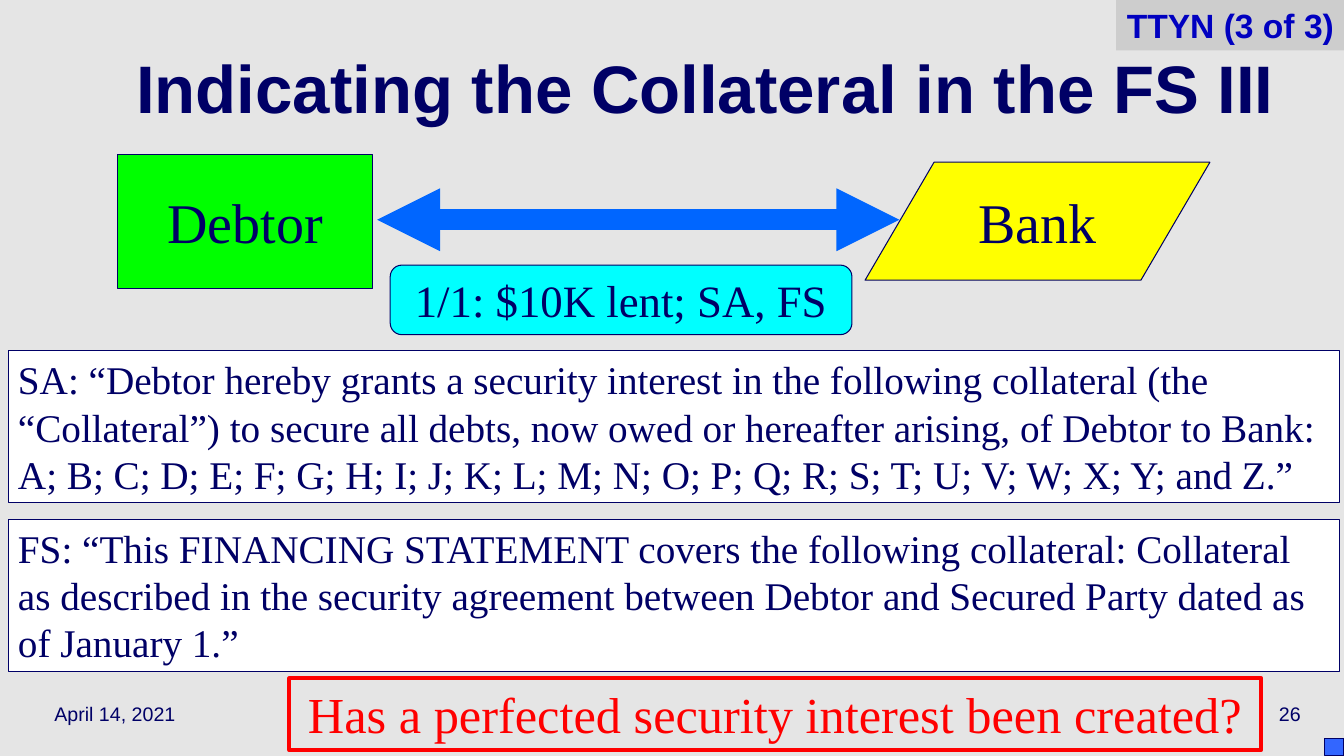
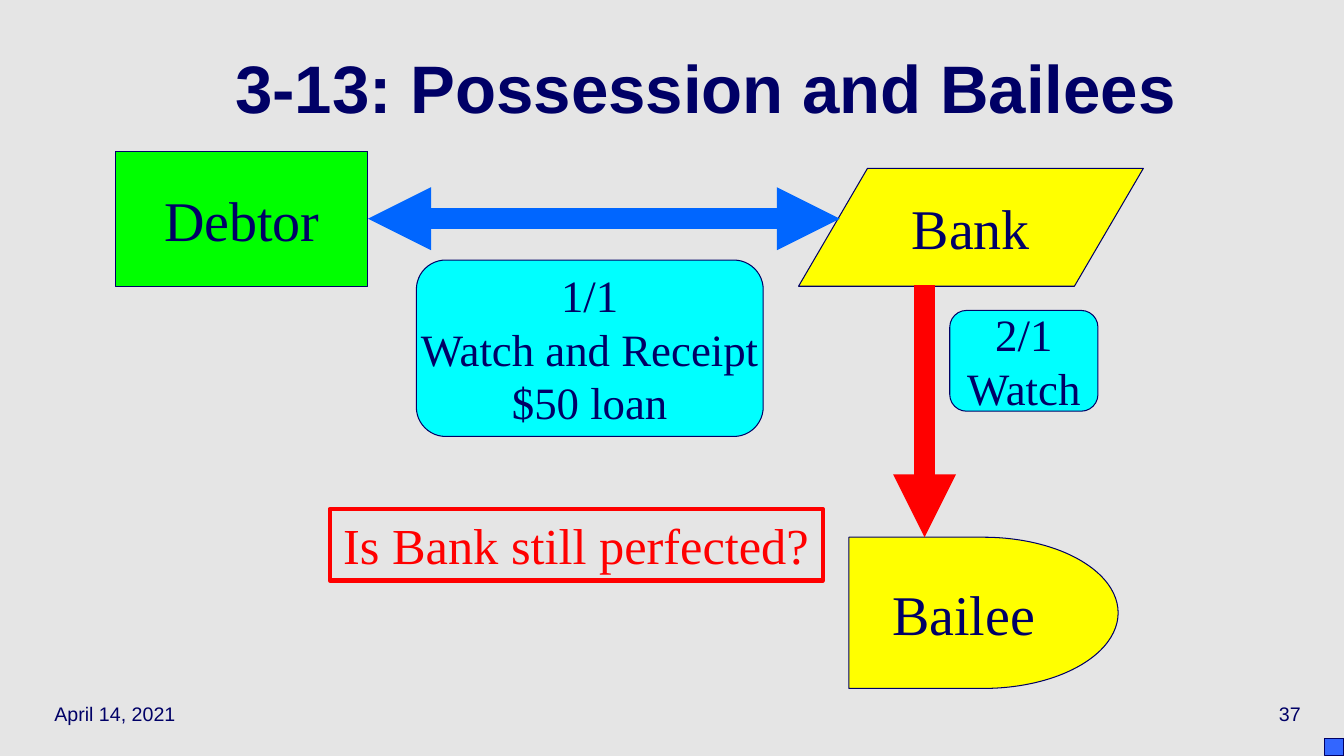
from dataclasses import dataclass
from typing import Optional

from lxml.etree import SubElement
from pptx import Presentation
from pptx.dml.color import RGBColor
from pptx.enum.shapes import MSO_CONNECTOR, MSO_SHAPE
from pptx.enum.text import MSO_ANCHOR, PP_ALIGN
from pptx.oxml.ns import qn
from pptx.shapes.autoshape import Shape
from pptx.shapes.connector import Connector
from pptx.slide import Slide
from pptx.text.text import TextFrame
from pptx.util import Inches, Pt


@dataclass(frozen=True)
class Theme:
    sans: str = "Arial"
    serif: str = "Times New Roman"
    background: str = "E5E5E5"
    tag_fill: str = "CDCDCD"
    ink: str = "000066"
    tag_ink: str = "0000C0"
    green: str = "00FF00"
    yellow: str = "FFFF00"
    cyan: str = "00FFFF"
    white: str = "FFFFFF"
    red: str = "FF0000"
    arrow_blue: str = "0066FF"
    corner_blue: str = "3366FF"
    title_size: int = 48
    party_size: int = 40
    question_size: int = 36
    event_size: int = 32
    quote_size: int = 28
    tag_size: int = 24
    footer_size: int = 14
    thin_line: float = 0.75
    question_line: float = 3
    arrow_line: float = 15


THEME = Theme()


@dataclass(frozen=True)
class TextStyle:
    size: int
    font: str = THEME.serif
    color: str = THEME.ink
    bold: bool = False
    align: PP_ALIGN = PP_ALIGN.CENTER
    anchor: MSO_ANCHOR = MSO_ANCHOR.MIDDLE
    wrap: bool = False


@dataclass(frozen=True)
class BoxStyle:
    text: TextStyle
    fill: Optional[str]
    line: Optional[str] = THEME.ink
    line_width: float = THEME.thin_line


@dataclass(frozen=True)
class Box:
    style: BoxStyle
    left: float
    top: float
    width: float
    height: float
    text: str = ""
    kind: MSO_SHAPE = MSO_SHAPE.RECTANGLE


@dataclass(frozen=True)
class Arrow:
    start: tuple[float, float]
    end: tuple[float, float]
    color: str
    both_ends: bool = False


# Text and box styles
TITLE = TextStyle(THEME.title_size, THEME.sans, bold=True, wrap=True)
DATE = TextStyle(THEME.footer_size, THEME.sans, align=PP_ALIGN.LEFT)
NUMBER = TextStyle(THEME.footer_size, THEME.sans, align=PP_ALIGN.RIGHT)
PARTY_TEXT = TextStyle(THEME.party_size)
DEBTOR = BoxStyle(PARTY_TEXT, THEME.green)
HOLDER = BoxStyle(PARTY_TEXT, THEME.yellow)
EVENT = BoxStyle(TextStyle(THEME.event_size), THEME.cyan)
QUOTE = BoxStyle(
    TextStyle(THEME.quote_size, align=PP_ALIGN.LEFT, anchor=MSO_ANCHOR.TOP, wrap=True),
    THEME.white)
QUESTION = BoxStyle(
    TextStyle(THEME.question_size, color=THEME.red, anchor=MSO_ANCHOR.TOP, wrap=True),
    None, THEME.red, THEME.question_line)
TAG = BoxStyle(
    TextStyle(THEME.tag_size, THEME.sans, THEME.tag_ink, True,
              PP_ALIGN.RIGHT, MSO_ANCHOR.TOP, True),
    THEME.tag_fill, None)
CORNER = Box(BoxStyle(DATE, THEME.corner_blue), 13.14, 7.33, 0.19, 0.17)


def write_text(frame: TextFrame, text: str, style: TextStyle) -> None:
    frame.text = text
    frame.word_wrap = style.wrap
    frame.vertical_anchor = style.anchor
    for paragraph in frame.paragraphs:
        paragraph.alignment = style.align
        for span in paragraph.runs:
            span.font.name = style.font
            span.font.size = Pt(style.size)
            span.font.bold = style.bold
            span.font.color.rgb = RGBColor.from_string(style.color)


def add_box(page: Slide, box: Box) -> Shape:
    shape = page.shapes.add_shape(
        box.kind, Inches(box.left), Inches(box.top), Inches(box.width), Inches(box.height))
    shape.shadow.inherit = False
    style = box.style
    if style.fill:
        shape.fill.solid()
        shape.fill.fore_color.rgb = RGBColor.from_string(style.fill)
    else:
        shape.fill.background()
    if style.line:
        shape.line.color.rgb = RGBColor.from_string(style.line)
        shape.line.width = Pt(style.line_width)
    else:
        shape.line.fill.background()
    if box.text:
        write_text(shape.text_frame, box.text, style.text)
    return shape


def add_arrow(page: Slide, arrow: Arrow) -> Connector:
    connector = page.shapes.add_connector(
        MSO_CONNECTOR.STRAIGHT, *(Inches(value) for value in arrow.start + arrow.end))
    connector.line.color.rgb = RGBColor.from_string(arrow.color)
    connector.line.width = Pt(THEME.arrow_line)
    outline = connector.line._get_or_add_ln()
    for end in ("a:headEnd", "a:tailEnd") if arrow.both_ends else ("a:tailEnd",):
        SubElement(outline, qn(end), type="triangle")
    SubElement(connector._element.spPr, qn("a:effectLst"))
    return connector


def add_footer(page: Slide, left: float, text: str, style: TextStyle) -> None:
    box = page.shapes.add_textbox(Inches(left), Inches(6.83), Inches(2.78), Inches(0.5))
    write_text(box.text_frame, text, style)


def add_page(deck: Presentation, title: str, number: int) -> Slide:
    """Add a slide with the shared title, footers and corner square."""
    page = deck.slides.add_slide(deck.slide_layouts[5])
    heading = page.shapes.title
    heading.left, heading.top = Inches(0.89), Inches(0.33)
    heading.width, heading.height = Inches(12.22), Inches(1.25)
    write_text(heading.text_frame, title, TITLE)
    heading.text_frame.paragraphs[0].line_spacing = 0.7
    add_footer(page, 0.44, "April 14, 2021", DATE)
    add_footer(page, 10.22, str(number), NUMBER)
    add_box(page, CORNER)
    return page


def build_collateral(deck: Presentation) -> None:
    page = add_page(deck, "Indicating the Collateral in the FS III", 26)
    # Parties and loan
    add_box(page, Box(HOLDER, 8.58, 1.61, 3.42, 1.17, "Bank", MSO_SHAPE.FLOWCHART_DATA))
    add_arrow(page, Arrow((3.74, 2.18), (8.92, 2.18), THEME.arrow_blue, True))
    add_box(page, Box(EVENT, 3.87, 2.63, 4.58, 0.69, "1/1: $10K lent; SA, FS",
                      MSO_SHAPE.FLOWCHART_ALTERNATE_PROCESS))
    add_box(page, Box(DEBTOR, 1.17, 1.53, 2.52, 1.33, "Debtor"))
    # Quoted documents
    quotes = (
        "SA: “Debtor hereby grants a security interest in the following collateral "
        "(the “Collateral”) to secure all debts, now owed or hereafter arising, of "
        "Debtor to Bank: A; B; C; D; E; F; G; H; I; J; K; L; M; N; O; P; Q; R; S; T; "
        "U; V; W; X; Y; and Z.”",
        "FS: “This FINANCING STATEMENT covers the following collateral: Collateral as "
        "described in the security agreement between Debtor and Secured Party dated "
        "as of January 1.”",
    )
    for index, quote in enumerate(quotes):
        add_box(page, Box(QUOTE, 0.08, 3.48 + 1.67 * index, 13.21, 1.51, quote))
    # Question and tag
    add_box(page, Box(QUESTION, 2.87, 6.73, 9.64, 0.71,
                      "Has a perfected security interest been created?"))
    add_box(page, Box(TAG, 11.07, 0, 2.26, 0.5, "TTYN (3 of 3)"))


def build_bailees(deck: Presentation) -> None:
    page = add_page(deck, "3‑13: Possession and Bailees", 37)
    # Loan between debtor and bank
    add_box(page, Box(HOLDER, 7.92, 1.67, 3.42, 1.17, "Bank", MSO_SHAPE.FLOWCHART_DATA))
    debtor = add_box(page, Box(DEBTOR, 1.15, 1.5, 2.5, 1.34, "Debtor",
                               MSO_SHAPE.FLOWCHART_PROCESS))
    loan = add_arrow(page, Arrow((3.65, 2.17), (8.33, 2.17), THEME.arrow_blue, True))
    loan.begin_connect(debtor, 3)
    add_box(page, Box(EVENT, 4.13, 2.58, 3.44, 1.75, "1/1\nWatch and Receipt\n$50 loan",
                      MSO_SHAPE.FLOWCHART_ALTERNATE_PROCESS))
    # Question
    add_box(page, Box(QUESTION, 3.27, 5.05, 4.89, 0.71, "Is Bank still perfected?"))
    # Delivery to bailee
    add_box(page, Box(HOLDER, 8.42, 5.33, 2.67, 1.5, "Bailee", MSO_SHAPE.FLOWCHART_DELAY))
    add_arrow(page, Arrow((9.17, 2.83), (9.17, 5.33), THEME.red))
    add_box(page, Box(EVENT, 9.42, 3.08, 1.47, 1, "2/1\nWatch",
                      MSO_SHAPE.FLOWCHART_ALTERNATE_PROCESS))


def main() -> None:
    deck = Presentation()
    deck.slide_width, deck.slide_height = Inches(13.33), Inches(7.5)
    background = deck.slide_master.background.fill
    background.solid()
    background.fore_color.rgb = RGBColor.from_string(THEME.background)
    build_collateral(deck)
    build_bailees(deck)
    deck.save("out.pptx")


if __name__ == "__main__":
    main()
